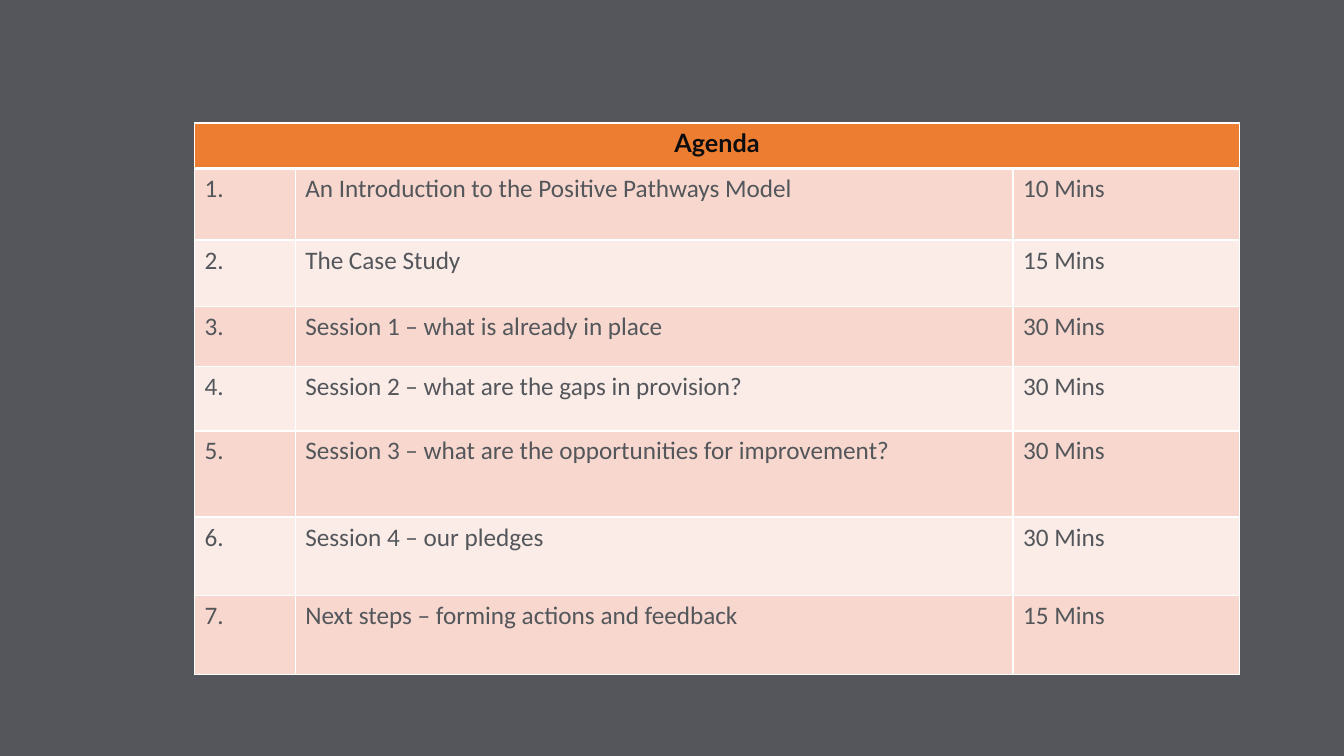
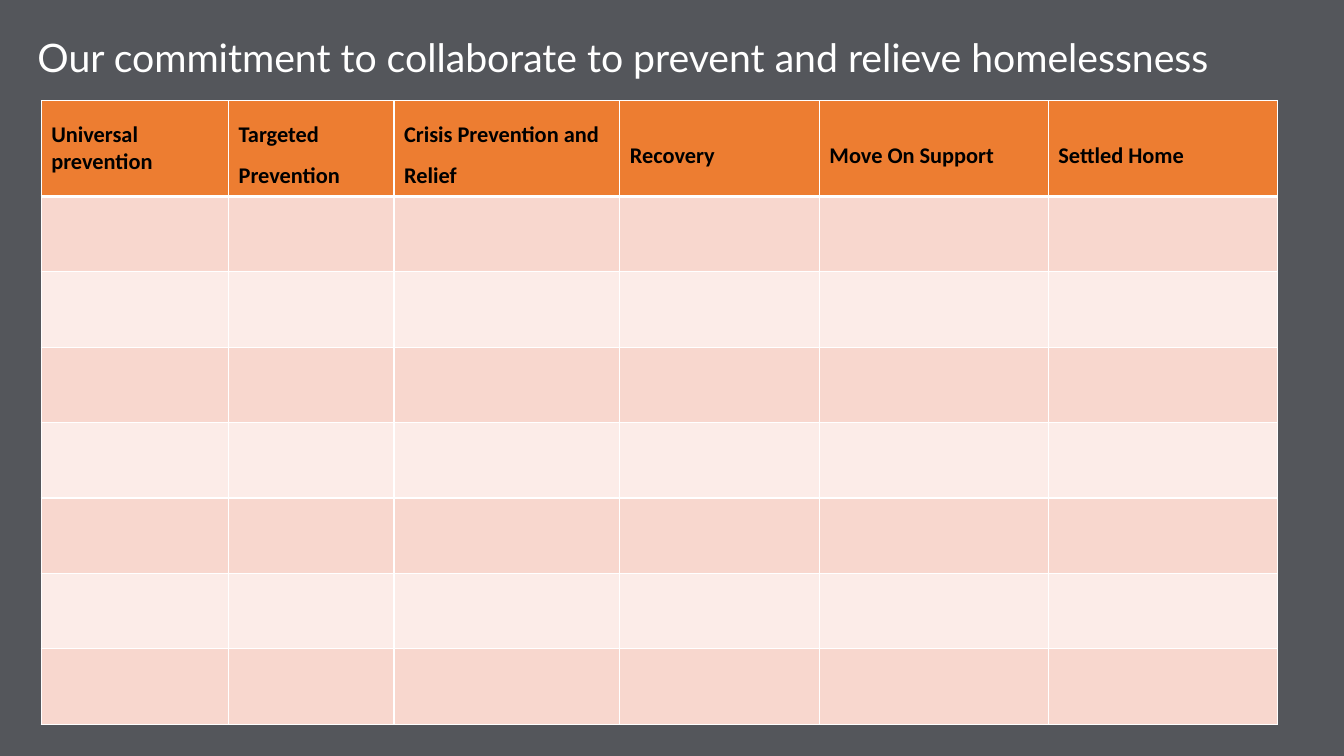
from lxml import etree
from pptx import Presentation
from pptx.dml.color import RGBColor
from pptx.enum import text
from pptx.oxml import ns
from pptx.util import Cm, Pt

INK = {
    "page": "54565B",
    "head": "ED7D31",
    "odd": "F8D7CE",
    "even": "FCECE8",
    "line": "FFFFFF",
    "title": "FFFFFF",
    "agenda": "0D0D0D",
    "body": "53565A",
    "black": "000000",
}

AGENDA = [
    ("An Introduction to the Positive Pathways Model", 10),
    ("The Case Study", 15),
    ("Session 1 – what is already in place", 30),
    ("Session 2 – what are the gaps in provision?", 30),
    ("Session 3 – what are the opportunities for improvement?", 30),
    ("Session 4 – our pledges", 30),
    ("Next steps – forming actions and feedback", 15),
]

STAGES = [
    "Universal prevention",
    "Targeted Prevention",
    "Crisis Prevention and Relief",
    "Recovery",
    "Move On Support",
    "Settled Home",
]


def color(name):
    return RGBColor.from_string(INK[name])


def style(para, face, size, ink, bold=False):
    font = para.font
    font.name, font.size, font.bold = face, Pt(size), bold
    font.color.rgb = color(ink)


def border(cell, row):
    widths = {
        "lnL": 1,
        "lnR": 1,
        "lnT": 3 if row == 1 else 1,
        "lnB": 3 if row == 0 else 1,
    }
    props = cell._tc.get_or_add_tcPr()
    for side, width in widths.items():
        line = etree.SubElement(props, ns.qn(f"a:{side}"), w=str(Pt(width)))
        fill = etree.SubElement(line, ns.qn("a:solidFill"))
        etree.SubElement(fill, ns.qn("a:srgbClr"), val=INK["line"])


def add_grid(slide, left, top, cols, rows):
    frame = slide.shapes.add_table(
        len(rows), len(cols), Cm(left), Cm(top), Cm(sum(cols)), Cm(sum(rows))
    )
    table = frame.table
    for col, width in zip(table.columns, cols):
        col.width = Cm(width)
    for index, (row, height) in enumerate(zip(table.rows, rows)):
        row.height = Cm(height)
        shade = "head" if index == 0 else "odd" if index % 2 else "even"
        for cell in row.cells:
            border(cell, index)
            cell.fill.solid()
            cell.fill.fore_color.rgb = color(shade)
    return table


def write(cell, words, face, size, ink, bold=False):
    cell.text = words
    para = cell.text_frame.paragraphs[0]
    style(para, face, size, ink, bold)
    return para


def add_title(slide, words):
    title = slide.shapes.title
    title.left, title.top = Cm(0.69), Cm(0.71)
    title.width, title.height = Cm(32.18), Cm(1.45)
    frame = title.text_frame
    frame.text = words
    frame.word_wrap = True
    frame.auto_size = text.MSO_AUTO_SIZE.NONE
    frame.vertical_anchor = text.MSO_ANCHOR.TOP
    para = frame.paragraphs[0]
    para.alignment = text.PP_ALIGN.LEFT
    style(para, "Lato", 28, "title")


def add_agenda(deck):
    slide = deck.slides.add_slide(deck.slide_layouts[6])
    rows = [1.15, 1.8, 1.67, 1.51, 1.63, 2.17, 1.98, 1.98]
    table = add_grid(slide, 4.9, 3.1, [2.54, 18.09, 5.71], rows)
    head = table.cell(0, 0)
    head.merge(table.cell(0, 2))
    para = write(head, "Agenda", "Lato", 18, "agenda", True)
    para.alignment = text.PP_ALIGN.CENTER
    for row, (topic, mins) in enumerate(AGENDA, 1):
        for col, words in enumerate((f"{row}.", topic, f"{mins} Mins")):
            write(table.cell(row, col), words, "Calibri", 18, "body")


def add_pledge(deck):
    slide = deck.slides.add_slide(deck.slide_layouts[5])
    cols = [4.72, 4.17, 5.69, 5.03, 5.77, 5.77]
    table = add_grid(slide, 1.04, 2.54, cols, [2.41] + [1.9] * 7)
    for col, stage in enumerate(STAGES):
        cell = table.cell(0, col)
        cell.vertical_anchor = text.MSO_ANCHOR.MIDDLE
        para = write(cell, stage, "Calibri", 16, "black", True)
        if col:
            para.line_spacing = 1.5
    add_title(slide, "Our commitment to collaborate to prevent and relieve homelessness")


def main():
    deck = Presentation()
    deck.slide_width, deck.slide_height = Cm(33.87), Cm(19.05)
    fill = deck.slide_master.background.fill
    fill.solid()
    fill.fore_color.rgb = color("page")
    add_agenda(deck)
    add_pledge(deck)
    deck.save("out.pptx")


if __name__ == "__main__":
    main()
